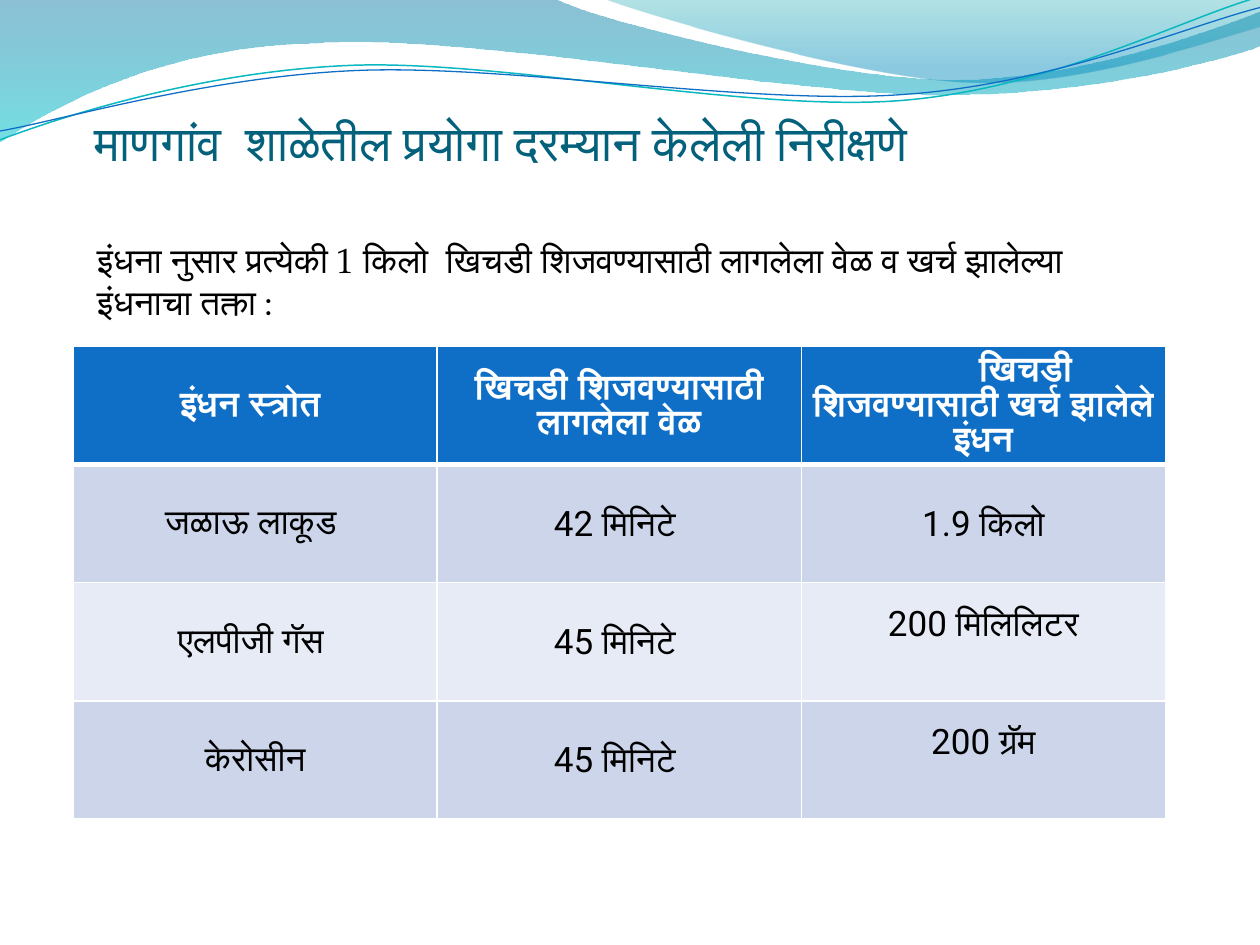
from lxml import etree
from pptx import Presentation
from pptx.dml.color import RGBColor
from pptx.enum.lang import MSO_LANGUAGE_ID
from pptx.enum.text import MSO_ANCHOR, PP_ALIGN
from pptx.oxml.ns import qn
from pptx.util import Inches, Pt

CENTER = PP_ALIGN.CENTER
LEFT = PP_ALIGN.LEFT
TOP = MSO_ANCHOR.TOP
MIDDLE = MSO_ANCHOR.MIDDLE
BOTTOM = MSO_ANCHOR.BOTTOM
MARATHI = MSO_LANGUAGE_ID.MARATHI

COLORS = {
    "title": "04617B", "text": "000000", "white": "FFFFFF",
    "header": "0F6FC6", "band_dark": "CCD5EA", "band_light": "E7EBF5",
    "wave_blue": "0074A1", "wave_cyan": "00C6CF",
    "corner_teal": "00A1A9", "corner_blue": "008BBF", "line_teal": "0AB8BF",
}
BODY_FONT = "TeX Gyre Pagella"
CELL_FONT = "Roboto"

HEADERS = ["इंधन स्त्रोत ", "खिचडी शिजवण्यासाठी लागलेला वेळ",
           "खिचडी शिजवण्यासाठी खर्च झालेले इंधन"]
ROWS = [
    ["जळाऊ लाकूड ", "42 मिनिटे ", "1.9 किलो"],
    ["एलपीजी गॅस ", "45 मिनिटे ", "200 मिलिलिटर"],
    ["केरोसीन", "45 मिनिटे ", "200 ग्रॅम"],
]


def color(name):
    return RGBColor.from_string(COLORS[name])


def write_text(frame, text, size=20, font=BODY_FONT, fill="text", bold=False,
               align=LEFT, before=0, line_spacing=None, indent=0):
    paragraph = frame.paragraphs[0]
    paragraph.alignment = align
    paragraph.space_before = Pt(before)
    if line_spacing:
        paragraph.line_spacing = Pt(line_spacing)
    if indent:
        properties = paragraph._p.get_or_add_pPr()
        properties.set("marL", "0")
        properties.set("indent", str(Inches(indent)))
    run = paragraph.add_run()
    run.text = text
    run.font.size = Pt(size)
    run.font.name = font
    run.font.bold = bold
    run.font.language_id = MARATHI
    run.font.color.rgb = color(fill)


def set_margins(target, left, top, right, bottom):
    target.margin_left, target.margin_top = Inches(left), Inches(top)
    target.margin_right, target.margin_bottom = Inches(right), Inches(bottom)


def add_text_box(slide, box, text, anchor, margins, **text_format):
    frame = slide.shapes.add_textbox(*map(Inches, box)).text_frame
    frame.word_wrap = True
    frame.vertical_anchor = anchor
    set_margins(frame, *margins)
    write_text(frame, text, **text_format)


def add_outline(slide, box, start, segments, close):
    """Draw segments of one point (a line) or three points (a cubic curve)."""
    left, top = box[:2]

    def place(point):
        return Inches(left + point[0]), Inches(top + point[1])

    builder = slide.shapes.build_freeform(*place(start), scale=1.0)
    builder.add_line_segments([place(points[-1]) for points in segments],
                              close=close)
    shape = builder.convert_to_shape()
    shape.shadow.inherit = False
    lines = list(shape._element.spPr.iter(qn("a:lnTo")))
    for line, points in zip(lines, segments):
        if len(points) == 3:
            curve = etree.Element(qn("a:cubicBezTo"))
            for x, y in map(place, points):
                etree.SubElement(curve, qn("a:pt"), x=str(x - shape.left),
                                 y=str(y - shape.top))
            line.getparent().replace(line, curve)
    return shape


def add_gradient_wave(slide, box, start, segments, stops):
    shape = add_outline(slide, box, start, segments, close=True)
    shape.line.fill.background()
    shape.fill.gradient()
    shape.fill.gradient_angle = 270
    for stop, (position, name, opacity) in zip(shape.fill.gradient_stops, stops):
        stop.position = position
        stop.color.rgb = color(name)
    color_nodes = shape._element.spPr.iter(qn("a:srgbClr"))
    for node, (position, name, opacity) in zip(color_nodes, stops):
        etree.SubElement(node, qn("a:alpha")).set("val", str(opacity * 1000))


def add_wave_line(slide, box, start, segments, name, width):
    shape = add_outline(slide, box, start, segments, close=False)
    shape.fill.background()
    shape.line.color.rgb = color(name)
    shape.line.width = Pt(width)


def add_wave_banner(slide, box):
    add_gradient_wave(slide, box, (0, 0), [
        [(4.4, -0.01)],
        [(4.76, 0.17), (6.64, 0.63), (7.58, 0.63)],
        [(8.53, 0.63), (9.58, 0.26), (10, 0.09)],
        [(10.01, 0.36)],
        [(9.83, 0.44), (8.7, 0.76), (7.46, 0.75)],
        [(6.22, 0.75), (3.82, 0.28), (2.57, 0.34)],
        [(1.29, 0.36), (0.46, 0.83), (-0.01, 1.13)],
    ], [(0, "wave_blue", 45), (1, "wave_cyan", 55)])
    add_gradient_wave(slide, box, (4.79, -0.01), [
        [(5.09, 0.11), (6.82, 0.62), (7.69, 0.65)],
        [(8.56, 0.69), (9.61, 0.32), (10, 0.21)],
        [(10, 0)],
    ], [(0, "corner_teal", 30), (0.8, "corner_blue", 45)])
    add_wave_line(slide, box, (0, 1.11), [
        [(0.48, 0.93), (1.58, 0.57), (2.77, 0.52)],
        [(3.95, 0.47), (5.93, 0.89), (7.13, 0.8)],
        [(8.33, 0.71), (9.38, 0.15), (9.98, -0.02)],
    ], "line_teal", 0.85)
    add_wave_line(slide, box, (0, 1.04), [
        [(0.47, 0.96), (1.64, 0.61), (2.83, 0.56)],
        [(4.03, 0.51), (5.97, 0.84), (7.17, 0.75)],
        [(8.36, 0.67), (9.41, 0.21), (10, 0.06)],
    ], "header", 0.75)


def set_borders(cell, top, bottom):
    properties = cell._tc.get_or_add_tcPr()
    widths = {"a:lnL": 1, "a:lnR": 1, "a:lnT": top, "a:lnB": bottom}
    for index, (tag, width) in enumerate(widths.items()):
        line = etree.Element(qn(tag), w=str(Pt(width)))
        fill = etree.SubElement(line, qn("a:solidFill"))
        etree.SubElement(fill, qn("a:srgbClr")).set("val", COLORS["white"])
        properties.insert(index, line)


def add_fuel_table(slide, box):
    rows = [HEADERS] + ROWS
    table = slide.shapes.add_table(len(rows), len(HEADERS),
                                   *map(Inches, box)).table
    for row_index, values in enumerate(rows):
        is_header = row_index == 0
        band = "band_dark" if row_index % 2 else "band_light"
        for column_index, text in enumerate(values):
            cell = table.cell(row_index, column_index)
            in_last_column = column_index == len(HEADERS) - 1
            raised = in_last_column and row_index > 1
            cell.fill.solid()
            cell.fill.fore_color.rgb = color("header" if is_header else band)
            set_borders(cell, top=3 if row_index == 1 else 1,
                        bottom=3 if is_header else 1)
            cell.vertical_anchor = MIDDLE
            set_margins(cell, 0.01, 0.01, 0.01, 0.28 if raised else 0)
            if is_header:
                write_text(cell.text_frame, text, fill="white", bold=True,
                           align=CENTER, line_spacing=20,
                           indent=0.67 if in_last_column else 0)
            else:
                write_text(cell.text_frame, text, font=CELL_FONT, align=CENTER)


def main():
    presentation = Presentation()
    presentation.slide_width = Inches(10)
    presentation.slide_height = Inches(7.5)
    slide = presentation.slides.add_slide(presentation.slide_layouts[6])
    add_wave_banner(slide, (0, 0, 10, 1.13))
    add_text_box(slide, (0.75, 0.56, 8.75, 1.27),
                 "माणगांव  शाळेतील प्रयोगा दरम्यान केलेली निरीक्षणे",
                 BOTTOM, (0, 0.05, 0, 0.47),
                 size=28, font="Calibri", fill="title")
    add_text_box(slide, (0.75, 1.83, 8.33, 1),
                 "इंधना नुसार प्रत्येकी 1 किलो  खिचडी शिजवण्यासाठी लागलेला वेळ "
                 "व खर्च झालेल्या इंधनाचा तक्ता :",
                 TOP, (0.02, 0.06, 0.02, 0.05), before=4)
    add_fuel_table(slide, (0.58, 2.75, 8.67, 3.75))
    presentation.save("out.pptx")


if __name__ == "__main__":
    main()
